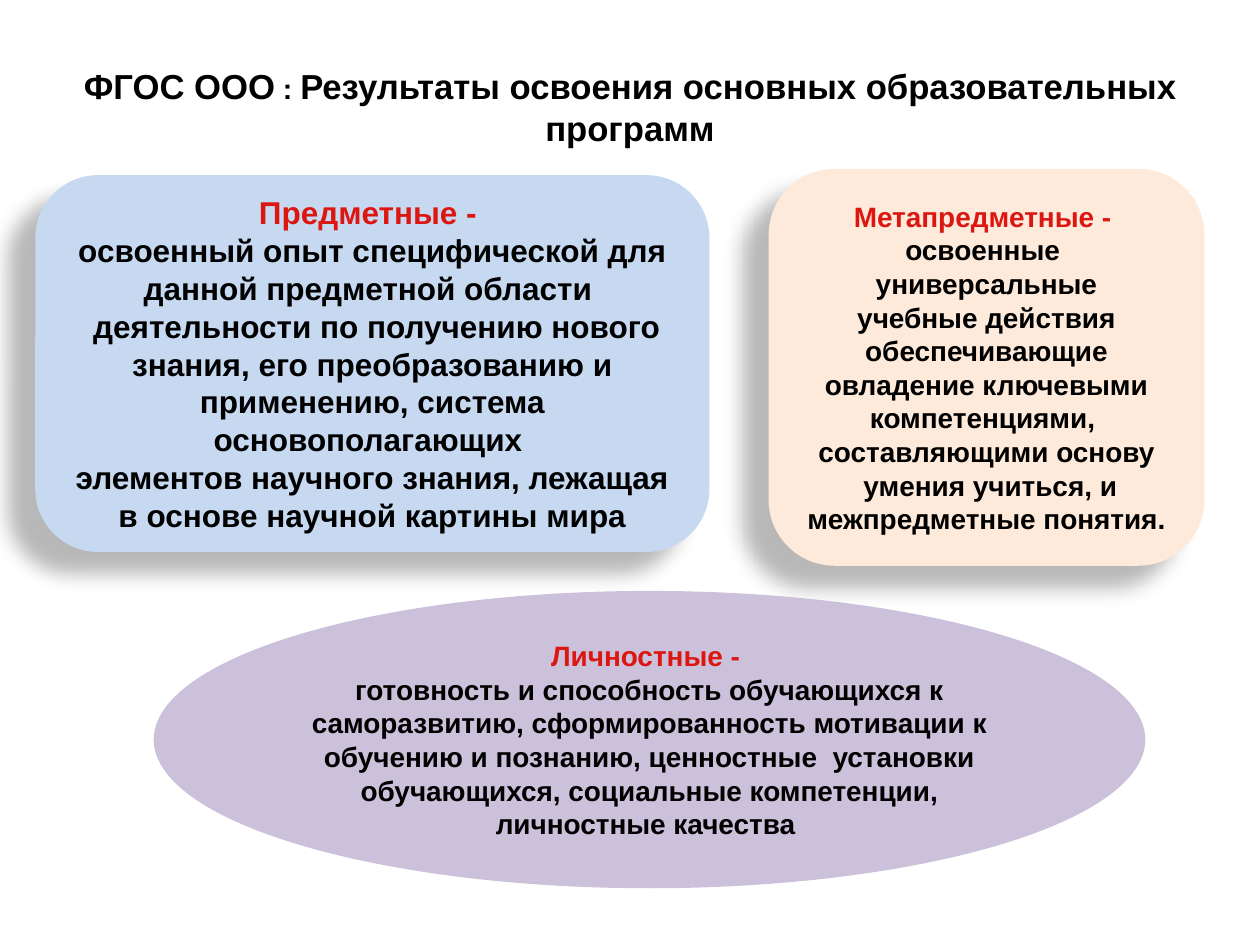
"""Build the slide on the results of mastering basic educational programmes."""
from lxml import etree
from pptx import Presentation
from pptx import util as u
from pptx.dml.color import RGBColor
from pptx.enum import shapes, text
from pptx.oxml import ns

FONT = "Arial"
BLACK = RGBColor(0x00, 0x00, 0x00)
RED = RGBColor(0xDC, 0x17, 0x12)
BLUE = RGBColor(0xC6, 0xD9, 0xF1)
PEACH = RGBColor(0xFD, 0xEA, 0xDA)
LILAC = RGBColor(0xCC, 0xC1, 0xDA)

TITLE_RUNS = [
    ("ФГОС ООО", 19.8),
    (" : ", 16.2),
    ("Результаты освоения основных образовательных программ", 19.8),
]
SUBJECT_LINES = [
    "Предметные - ",
    "освоенный опыт специфической для данной предметной области ",
    " деятельности по получению нового знания, его преобразованию и "
    "применению, система основополагающих ",
    "элементов научного знания, лежащая в основе научной картины мира",
]
META_LINES = [
    "Метапредметные - ",
    "освоенные  универсальные",
    " учебные действия ",
    "обеспечивающие овладение ключевыми компетенциями, ",
    "составляющими основу",
    " умения учиться, и межпредметные понятия.",
]
PERSONAL_LINES = [
    "Личностные - ",
    "готовность и способность обучающихся к саморазвитию, сформированность "
    "мотивации к обучению и познанию, ценностные  установки обучающихся, "
    "социальные компетенции,",
    "личностные качества ",
]


def format_run(run, size, color):
    """Apply the common bold font to a run."""
    run.font.name = FONT
    run.font.size = u.Pt(size)
    run.font.bold = True
    run.font.color.rgb = color


def set_title(slide):
    """Place and fill the title placeholder."""
    title = slide.shapes.title
    title.left, title.top = u.Inches(0.5), u.Inches(0.3)
    title.width, title.height = u.Inches(9), u.Inches(1.09)
    frame = title.text_frame
    frame.word_wrap = True
    frame.vertical_anchor = text.MSO_ANCHOR.MIDDLE
    paragraph = frame.paragraphs[0]
    paragraph.alignment = text.PP_ALIGN.CENTER
    for words, size in TITLE_RUNS:
        run = paragraph.add_run()
        run.text = words
        format_run(run, size, BLACK)


def add_shadow(shape):
    """Give a shape a soft shadow to the lower left."""
    effects = shape._element.spPr.find(ns.qn("a:effectLst"))
    shadow = etree.SubElement(
        effects, ns.qn("a:outerShdw"), blurRad=str(u.Pt(11.8)),
        dist=str(u.Pt(19.7)), dir=str(141 * 60000), algn="ctr", rotWithShape="0")
    color = etree.SubElement(shadow, ns.qn("a:srgbClr"), val=str(BLACK))
    etree.SubElement(color, ns.qn("a:alpha"), val="28000")


def add_result(slide, kind, box, fill, lines, size):
    """Add a filled shape with a red heading and black text."""
    shape = slide.shapes.add_shape(kind, *map(u.Inches, box))
    shape.shadow.inherit = False
    shape.fill.solid()
    shape.fill.fore_color.rgb = fill
    shape.line.fill.background()
    frame = shape.text_frame
    frame.word_wrap = True
    frame.vertical_anchor = text.MSO_ANCHOR.MIDDLE
    frame.text = "\n".join(lines)
    for index, paragraph in enumerate(frame.paragraphs):
        paragraph.alignment = text.PP_ALIGN.CENTER
        format_run(paragraph.runs[0], size, BLACK if index else RED)
    return shape


def main():
    """Build and save the presentation."""
    presentation = Presentation()
    presentation.slide_width = u.Inches(10)
    presentation.slide_height = u.Inches(7.5)
    slide = presentation.slides.add_slide(presentation.slide_layouts[5])
    set_title(slide)
    rounded = shapes.MSO_SHAPE.ROUNDED_RECTANGLE
    add_shadow(add_result(
        slide, rounded, (0.28, 1.39, 5.35, 2.99), BLUE, SUBJECT_LINES, 18))
    add_shadow(add_result(
        slide, rounded, (6.1, 1.34, 3.46, 3.15), PEACH, META_LINES, 16))
    add_result(slide, shapes.MSO_SHAPE.OVAL, (1.22, 4.69, 7.87, 2.36),
               LILAC, PERSONAL_LINES, 16)
    presentation.save("out.pptx")


if __name__ == "__main__":
    main()
